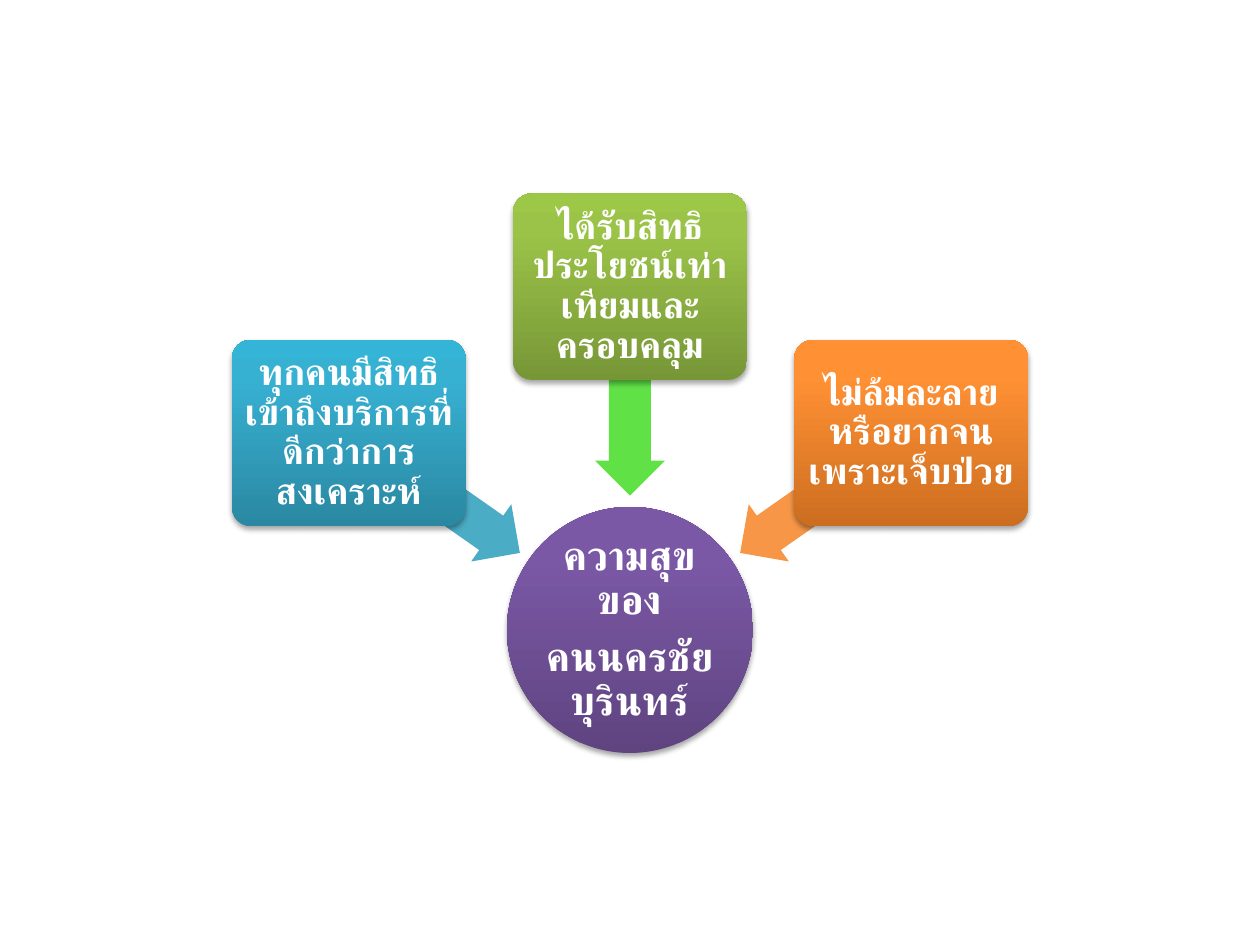
from dataclasses import dataclass
from math import cos, radians, sin

from lxml import etree
from pptx import Presentation
from pptx.dml.color import RGBColor
from pptx.enum.lang import MSO_LANGUAGE_ID
from pptx.enum.shapes import MSO_SHAPE
from pptx.enum.text import MSO_ANCHOR, PP_ALIGN
from pptx.oxml.ns import qn
from pptx.util import Cm, Pt

OVAL = MSO_SHAPE.OVAL
ROUNDED = MSO_SHAPE.ROUNDED_RECTANGLE
ARROW = MSO_SHAPE.LEFT_ARROW
MIDDLE = MSO_ANCHOR.MIDDLE
CENTER = PP_ALIGN.CENTER
THAI = MSO_LANGUAGE_ID.THAI


@dataclass(frozen=True)
class Theme:
    font: str = "Calibri"
    text: str = "FFFFFF"
    hub_size: int = 23
    block_size: int = 21
    hub: tuple = ("5F4480", "7B58A6", "7C57A8")
    blue: tuple = ("2A88A2", "37B1D2", "34B4D6")
    green: tuple = ("779737", "9BC348", "9DC746")
    orange: tuple = ("CC6E20", "FF9034", "FF9136")
    blue_arrow: str = "4BACC6"
    green_arrow: str = "60E146"
    orange_arrow: str = "F79646"


THEME = Theme()
HUB_X, HUB_Y, HUB_D = 12.7, 12.7, 4.96
BLOCK_W, BLOCK_H, BLOCK_RADIUS = 4.71, 3.76, 6.92
ARROW_W, ARROW_H, ARROW_RADIUS = 4.2, 1.41, 4.81

HUB_TEXT = ["ความสุขของ", "คนนครชัยบุรินทร์"]
SPOKES = [
    (215, "ทุกคนมีสิทธิเข้าถึงบริการที่ดีกว่าการสงเคราะห์", THEME.blue, THEME.blue_arrow),
    (270, "ได้รับสิทธิประโยชน์เท่าเทียมและครอบคลุม", THEME.green, THEME.green_arrow),
    (325, "ไม่ล้มละลายหรือยากจนเพราะเจ็บป่วย", THEME.orange, THEME.orange_arrow),
]


def around_hub(angle, radius):
    a = radians(angle)
    return HUB_X + radius * cos(a), HUB_Y + radius * sin(a)


def add_centered(s, kind, center, w, h):
    x, y = center
    sp = s.shapes.add_shape(kind, Cm(x - w / 2), Cm(y - h / 2), Cm(w), Cm(h))
    sp.shadow.inherit = False
    sp.line.fill.background()
    return sp


def add_color(parent, color):
    return etree.SubElement(parent, qn("a:srgbClr"), val=color)


def set_gradient(sp, colors):
    sp.fill.gradient()
    sp.fill.gradient_angle = 90
    stops = sp._element.spPr.find(qn("a:gradFill")).find(qn("a:gsLst"))
    for stop in list(stops):
        stops.remove(stop)
    for pos, color in zip((0, 80000, 100000), colors):
        add_color(etree.SubElement(stops, qn("a:gs"), pos=str(pos)), color)


def set_shadow(sp):
    effects = sp._element.spPr.find(qn("a:effectLst"))
    shadow = etree.SubElement(
        effects, qn("a:outerShdw"), blurRad=str(Pt(3.1)), dist=str(Pt(1.8)),
        dir="5400000", rotWithShape="0")
    etree.SubElement(add_color(shadow, "000000"), qn("a:alpha"), val="35000")


def set_text(sp, lines, size, inset):
    tf = sp.text_frame
    tf.word_wrap = True
    tf.vertical_anchor = MIDDLE
    tf.margin_left = tf.margin_right = tf.margin_top = tf.margin_bottom = Cm(inset)
    for i, line in enumerate(lines):
        p = tf.add_paragraph() if i else tf.paragraphs[0]
        p.alignment = CENTER
        p.line_spacing = 0.9
        p.space_after = Pt(size * 0.35)
        r = p.add_run()
        r.text = line
        r.font.name = THEME.font
        r.font.size = Pt(size)
        r.font.bold = True
        r.font.language_id = THAI
        r.font.color.rgb = RGBColor.from_string(THEME.text)


def add_hub(s):
    sp = add_centered(s, OVAL, (HUB_X, HUB_Y), HUB_D, HUB_D)
    set_gradient(sp, THEME.hub)
    set_shadow(sp)
    set_text(sp, HUB_TEXT, THEME.hub_size, inset=0.05)


def add_arrow(s, angle, color):
    sp = add_centered(s, ARROW, around_hub(angle, ARROW_RADIUS), ARROW_W, ARROW_H)
    sp.adjustments[0] = 0.6
    sp.adjustments[1] = 0.5
    sp.rotation = angle
    sp.fill.solid()
    sp.fill.fore_color.rgb = RGBColor.from_string(color)


def add_block(s, angle, text, colors):
    sp = add_centered(s, ROUNDED, around_hub(angle, BLOCK_RADIUS), BLOCK_W, BLOCK_H)
    sp.adjustments[0] = 0.1
    set_gradient(sp, colors)
    set_shadow(sp)
    set_text(sp, [text], THEME.block_size, inset=0.1)


def main():
    prs = Presentation()
    prs.slide_width, prs.slide_height = Cm(25.4), Cm(19.05)
    s = prs.slides.add_slide(prs.slide_layouts[6])
    add_hub(s)
    for angle, text, colors, arrow_color in SPOKES:
        add_arrow(s, angle, arrow_color)
        add_block(s, angle, text, colors)
    prs.save("out.pptx")


if __name__ == "__main__":
    main()
